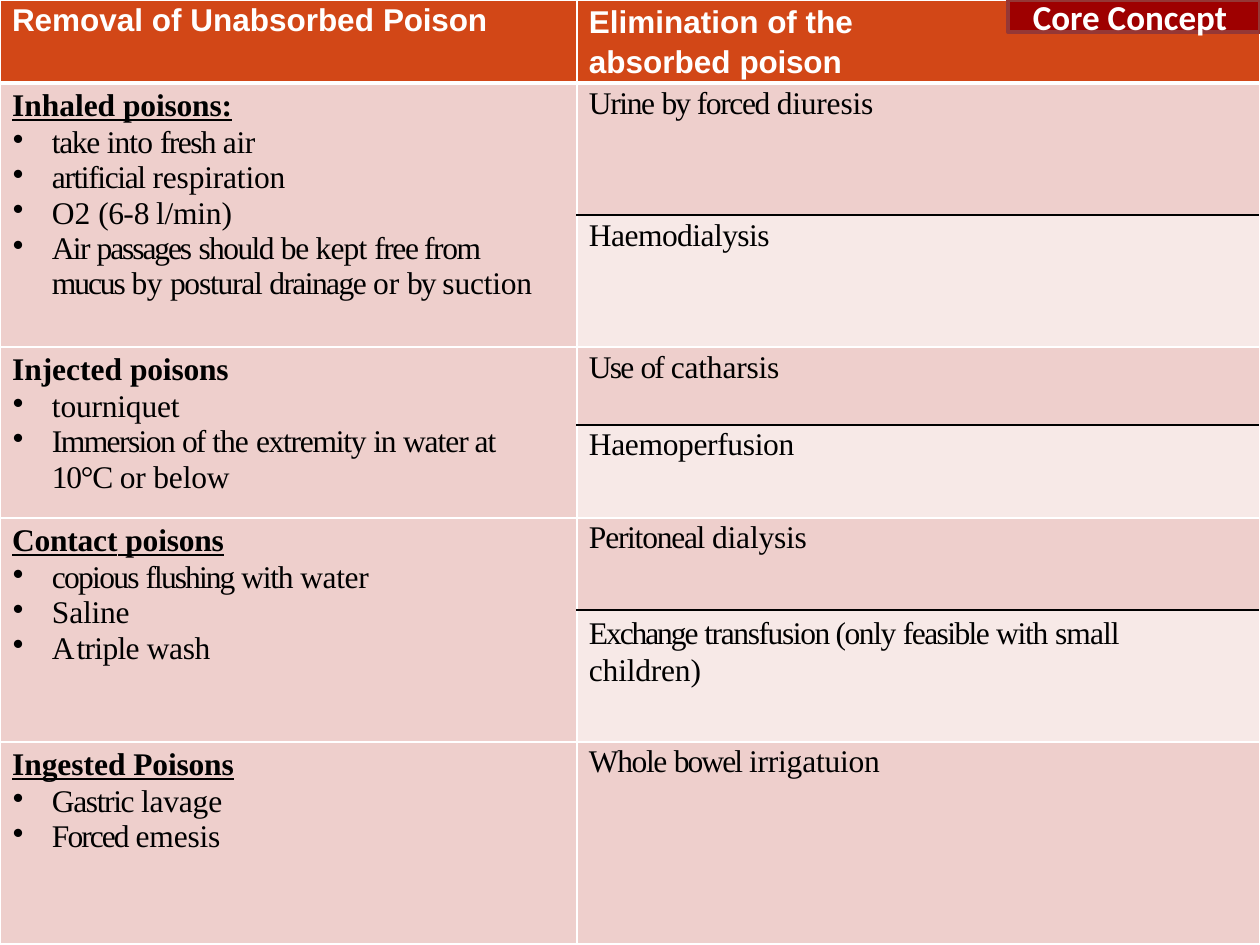
from dataclasses import dataclass
from typing import NamedTuple

from lxml.etree import SubElement
from pptx import Presentation
from pptx.dml.color import RGBColor
from pptx.enum.shapes import MSO_SHAPE
from pptx.enum.text import MSO_ANCHOR, PP_ALIGN
from pptx.oxml import parse_xml
from pptx.oxml.ns import nsdecls, qn
from pptx.util import Pt

EMU_PER_PX = 914400 / 126
COLORS = {
    "header": "D24717", "upper": "EECFCC", "lower": "F7E9E7",
    "badge": "9E0000", "badge_line": "953735",
    "white": "FFFFFF", "black": "000000",
}
COLUMN_WIDTHS = (577, 682)
ROW_HEIGHTS = (83, 132, 132, 78, 93, 92, 132, 202)
TEXT_INDENT, BULLET_INDENT, BULLET_HANG = 12, 52, 39
RIGHT_MARGIN = 25
EXACT_LINE = Pt(21.3)


class Span(NamedTuple):
    text: str
    spacing: float = 0


@dataclass
class Line:
    spans: list[Span]
    bold: bool = False
    underline: bool = False
    bullet: bool = False
    line_spacing: float | int | None = None
    space_before: float = 0


@dataclass
class Entry:
    row: int
    column: int
    lines: list[Line]
    top: int = 3
    row_span: int = 1


def px(length: int) -> int:
    return round(length * EMU_PER_PX)


def color(name: str) -> RGBColor:
    return RGBColor.from_string(COLORS[name])


def spans_of(*parts: tuple[str, float]) -> list[Span]:
    return [Span(*part) for part in parts]


def heading(*parts: tuple[str, float], underline: bool = True) -> Line:
    return Line(spans_of(*parts), True, underline, line_spacing=EXACT_LINE)


def first_bullet(*parts: tuple[str, float]) -> Line:
    return Line(spans_of(*parts), bullet=True, line_spacing=EXACT_LINE)


def bullet(*parts: tuple[str, float]) -> Line:
    return Line(spans_of(*parts), bullet=True, space_before=0.2)


def long_bullet(*parts: tuple[str, float]) -> Line:
    return Line(spans_of(*parts), bullet=True, line_spacing=1.01)


def plain(*parts: tuple[str, float], **options) -> Line:
    return Line(spans_of(*parts), **options)


ENTRIES = [
    # Header row
    Entry(0, 0, [plain(("Removal of Unabsorbed ", 0), ("Poison", -0.1), bold=True)]),
    Entry(0, 1, [plain(("Elimination of the", 0), bold=True),
                 plain(("absorbed ", 0), ("poison", -0.1), bold=True, space_before=2.6)], top=5),
    # Removal of unabsorbed poison
    Entry(1, 0, [
        heading(("Inhaled", 0), (" ", -0.9), ("poisons:", -0.1)),
        first_bullet(("take ", -0.8), ("into ", -0.5), ("fresh ", -0.9), ("air", -0.2)),
        bullet(("artificial ", -0.8), ("respiration", -0.1)),
        bullet(("O2 ", 0), ("(6-", -0.3), ("8 ", -0.9), ("l/min)", -0.1)),
        long_bullet(("Air ", -1), ("passages", -1.2), (" should ", -0.9), ("be ", -0.8),
                    ("kept ", -0.5), ("free from ", -0.8), ("mucus ", -1.2), ("by ", -0.3),
                    ("postural ", -0.7), ("drainage ", -0.9), ("or ", 0), ("by ", -1.2),
                    ("suction", -0.1)),
    ], row_span=2),
    Entry(3, 0, [
        heading(("Injected ", 0), ("poisons", -0.1), underline=False),
        first_bullet(("tourniquet", -0.1)),
        long_bullet(("Immersion ", -0.9), ("of ", -1.1), ("the ", -0.5), ("extremity ", -0.7),
                    ("in ", -0.8), ("water at ", -0.6), ("10°C ", -0.7), ("or ", -0.2),
                    ("below", -0.1)),
    ], row_span=2),
    Entry(5, 0, [
        heading(("Contact", -0.1), (" ", -0.7), ("poisons", -0.1)),
        first_bullet(("copious ", -1), ("flushing ", -1.1), ("with ", -0.7), ("water", -0.2)),
        bullet(("Saline", -0.1)),
        bullet(("A ", -2.4), ("triple ", -0.4), ("wash", -0.2)),
    ], row_span=2),
    Entry(7, 0, [
        heading(("Ingested", 0), (" Poisons", -0.1)),
        first_bullet(("Gastric ", -0.8), ("lavage", -0.1)),
        bullet(("Forced ", -1.1), ("emesis", -0.1)),
    ]),
    # Elimination of the absorbed poison
    Entry(1, 1, [plain(("Urine ", -0.8), ("by ", -1.2), ("forced ", -0.8), ("diuresis", -0.1))]),
    Entry(2, 1, [plain(("Haemodialysis", -0.3))]),
    Entry(3, 1, [plain(("Use ", -1), ("of ", -1.1), ("catharsis", -0.1))]),
    Entry(4, 1, [plain(("Haemoperfusion", -0.2))]),
    Entry(5, 1, [plain(("Peritoneal ", -0.7), ("dialysis", -0.1))]),
    Entry(6, 1, [plain(("Exchange ", -1.2), ("transfusion (only ", -0.8), ("feasible ", -0.9),
                       ("with ", -0.7), ("small ", -0.5), ("children)", -0.1),
                       line_spacing=Pt(21))], top=5),
    Entry(7, 1, [plain(("Whole ", -0.8), ("bowel ", -1.1), ("irrigatuion", -0.1))]),
]


def write_line(para, line: Line, font_name: str, font_color: str) -> None:
    properties = para._p.get_or_add_pPr()
    properties.set("marL", str(px(BULLET_INDENT if line.bullet else TEXT_INDENT)))
    properties.set("indent", str(-px(BULLET_HANG) if line.bullet else 0))
    if line.bullet:
        SubElement(properties, qn("a:buChar")).set("char", "•")
        tab = SubElement(SubElement(properties, qn("a:tabLst")), qn("a:tab"))
        tab.set("pos", str(px(BULLET_INDENT)))
        tab.set("algn", "l")
    if line.line_spacing:
        para.line_spacing = line.line_spacing
    para.space_before = Pt(line.space_before)
    for span in line.spans:
        run = para.add_run()
        run.text = span.text
        run.font.name, run.font.size = font_name, Pt(18)
        run.font.bold, run.font.underline = line.bold, line.underline
        run.font.color.rgb = color(font_color)
        run._r.get_or_add_rPr().set("spc", str(round(span.spacing * 100)))


def set_borders(cell, borders: dict[str, tuple[str, float]]) -> None:
    properties = cell._tc.get_or_add_tcPr()
    for position, (side, (name, width)) in enumerate(borders.items()):
        properties.insert(position, parse_xml(
            f'<a:ln{side} {nsdecls("a")} w="{Pt(width)}"><a:solidFill>'
            f'<a:srgbClr val="{COLORS[name]}"/></a:solidFill></a:ln{side}>'))


def fill_entry(table, entry: Entry) -> None:
    cell = table.cell(entry.row, entry.column)
    last_row = entry.row + entry.row_span - 1
    if entry.row_span > 1:
        cell.merge(table.cell(last_row, entry.column))
    is_header = entry.row == 0
    is_lower = entry.column == 1 and entry.row in (2, 4, 6)
    is_upper = entry.column == 1 and entry.row in (1, 3, 5)
    cell.margin_left = cell.margin_bottom = 0
    cell.margin_right, cell.margin_top = px(RIGHT_MARGIN), px(entry.top)
    cell.fill.solid()
    cell.fill.fore_color.rgb = color("header" if is_header else "lower" if is_lower else "upper")
    edge_widths = {0: 0.5, 1: 3, len(ROW_HEIGHTS): 0.5}
    set_borders(cell, {
        "L": ("white", 1 if entry.column else 0.5),
        "R": ("white", 0.5 if entry.column else 1),
        "T": ("black" if is_lower else "white", edge_widths.get(entry.row, 1)),
        "B": ("black" if is_upper else "white", edge_widths.get(last_row + 1, 1)),
    })
    frame = cell.text_frame
    for index, line in enumerate(entry.lines):
        para = frame.add_paragraph() if index else frame.paragraphs[0]
        write_line(para, line, "Arial" if is_header else "Times New Roman",
                   "white" if is_header else "black")


def add_poison_table(page) -> None:
    table = page.shapes.add_table(len(ROW_HEIGHTS), len(COLUMN_WIDTHS), 0, 0,
                                  px(sum(COLUMN_WIDTHS)), px(sum(ROW_HEIGHTS))).table
    table.first_row = table.horz_banding = False
    for column, width in zip(table.columns, COLUMN_WIDTHS):
        column.width = px(width)
    for row, height in zip(table.rows, ROW_HEIGHTS):
        row.height = px(height)
    for entry in ENTRIES:
        fill_entry(table, entry)


def add_badge(page) -> None:
    box = page.shapes.add_shape(MSO_SHAPE.RECTANGLE, px(1008), 0, px(252), px(32))
    box.shadow.inherit = False
    box.fill.solid()
    box.fill.fore_color.rgb = color("badge")
    box.line.color.rgb = color("badge_line")
    box.line.width = Pt(2)
    box.text_frame.text = "Core Concept "
    box.text_frame.vertical_anchor = MSO_ANCHOR.MIDDLE
    para = box.text_frame.paragraphs[0]
    para.alignment = PP_ALIGN.CENTER
    font = para.runs[0].font
    font.name, font.size, font.bold = "Calibri", Pt(20), True
    font.color.rgb = color("white")


def main() -> None:
    deck = Presentation()
    deck.slide_width, deck.slide_height = px(1260), px(945)
    page = deck.slides.add_slide(deck.slide_layouts[6])
    add_poison_table(page)
    add_badge(page)
    deck.save("out.pptx")


if __name__ == "__main__":
    main()
